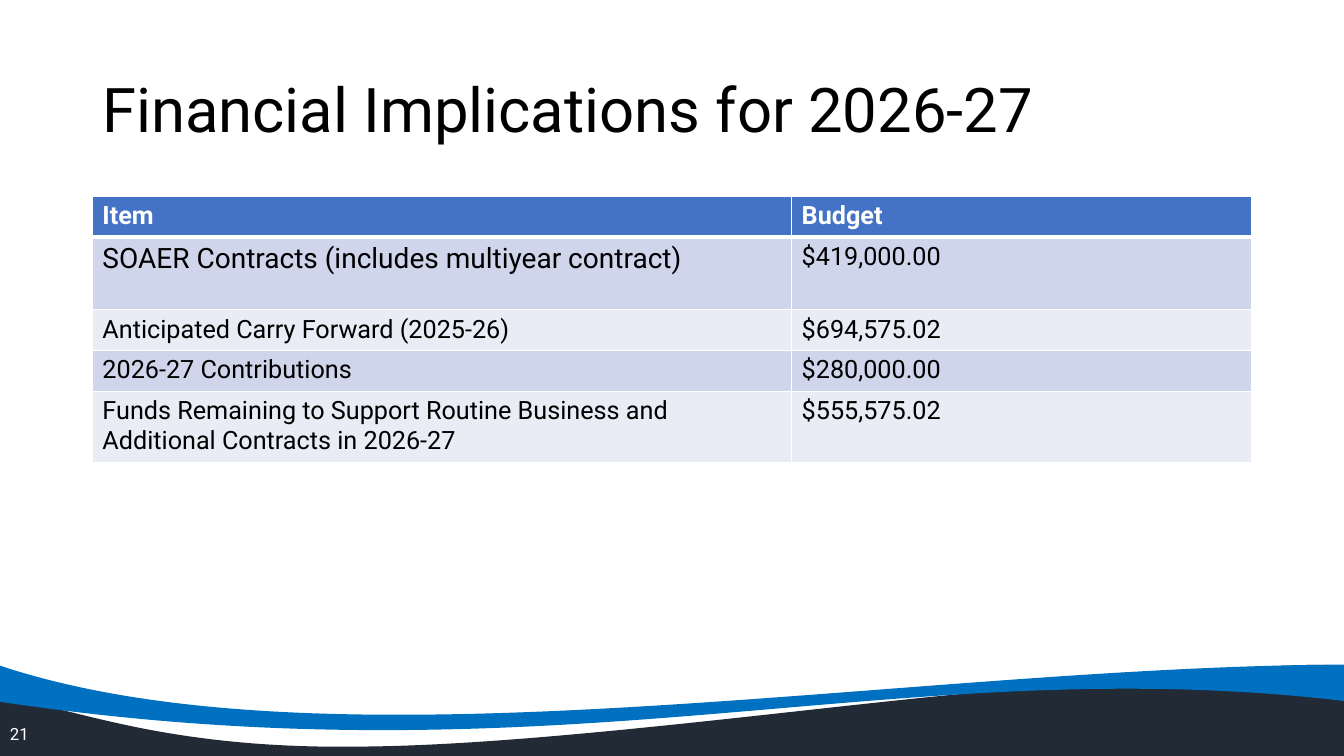
from lxml.etree import SubElement
from pptx import Presentation
from pptx.dml.color import RGBColor
from pptx.enum.text import MSO_ANCHOR as Anchor
from pptx.oxml.ns import qn
from pptx.util import Pt

PX = 9525  # EMU per px, 96 px to the inch
FONT = "Roboto"
COLORS = {
    "black": "000000",
    "white": "FFFFFF",
    "navy": "222A35",
    "blue": "0070C0",
    "header": "4472C4",
    "band_dark": "CFD5EA",
    "band_light": "E9EBF5",
}
BUDGET_ROWS = [
    ("Item", "Budget"),
    ("SOAER Contracts (includes multiyear contract)", "$419,000.00"),
    ("Anticipated Carry Forward (2025-26)", "$694,575.02"),
    ("2026-27 Contributions", "$280,000.00"),
    ("Funds Remaining to Support Routine Business and "
     "Additional Contracts in 2026-27", "$555,575.02"),
]
COLUMN_WIDTHS = [666, 438]
ROW_HEIGHTS = [39, 69, 39, 39, 66]
LARGE_CELL = (1, 0)

# Each wave is a box and its segments: one point is a line, three a curve.
NAVY_WAVE = (-3, 634, 1286, 86), [
    [(-3, 667)],
    [(54, 664), (136, 715), (350, 711)],
    [(524, 709), (792, 671), (948, 658)],
    [(1103, 644), (1296, 622), (1283, 640)],
    [(1282, 667), (1282, 693), (1282, 720)],
    [(-2, 720)],
]
BLUE_WAVE = (-3, 633, 1286, 62), [
    [(-3, 633)],
    [(313, 740), (861, 634), (1283, 633)],
    [(1283, 668)],
    [(855, 617), (542, 750), (-3, 668)],
]


def rgb(name):
    return RGBColor.from_string(COLORS[name])


def add_wave(slide, wave, color):
    """Build the wave's box as a freeform, then give its outline real curves."""
    (left, top, width, height), segments = wave
    right, bottom = left + width, top + height
    builder = slide.shapes.build_freeform(left, top, scale=PX)
    builder.add_line_segments([(right, top), (right, bottom), (left, bottom)])
    shape = builder.convert_to_shape()
    outline = next(shape._element.iter(qn("a:path")))
    del outline[:]
    for index, segment in enumerate(segments):
        line_tag = "a:lnTo" if index else "a:moveTo"
        tag = "a:cubicBezTo" if len(segment) == 3 else line_tag
        command = SubElement(outline, qn(tag))
        for x, y in segment:
            SubElement(command, qn("a:pt"), x=str(x - left), y=str(y - top))
    SubElement(outline, qn("a:close"))
    shape.shadow.inherit = False
    shape.fill.solid()
    shape.fill.fore_color.rgb = rgb(color)
    shape.line.fill.background()


def add_run(paragraph, text, size, color, bold=False):
    run = paragraph.add_run()
    run.text = text
    font = run.font
    font.name, font.size, font.bold = FONT, Pt(size), bold
    font.color.rgb = rgb(color)


def add_text(slide, box, text, size, color, line_spacing=1.0):
    frame = slide.shapes.add_textbox(*(value * PX for value in box)).text_frame
    frame.word_wrap = True
    frame.vertical_anchor = Anchor.MIDDLE
    paragraph = frame.paragraphs[0]
    paragraph.line_spacing = line_spacing
    add_run(paragraph, text, size, color)


def add_borders(cell, top, bottom):
    properties = cell._tc.get_or_add_tcPr()
    for side, width in (("L", 1), ("R", 1), ("T", top), ("B", bottom)):
        line = SubElement(properties, qn(f"a:ln{side}"), w=str(Pt(width)))
        fill = SubElement(line, qn("a:solidFill"))
        SubElement(fill, qn("a:srgbClr"), val=COLORS["white"])


def add_budget_table(slide, left, top):
    table = slide.shapes.add_table(
        len(BUDGET_ROWS), len(COLUMN_WIDTHS), left * PX, top * PX,
        sum(COLUMN_WIDTHS) * PX, sum(ROW_HEIGHTS) * PX,
    ).table
    for column, width in zip(table.columns, COLUMN_WIDTHS):
        column.width = width * PX
    for row, height in zip(table.rows, ROW_HEIGHTS):
        row.height = height * PX
    for row_index, texts in enumerate(BUDGET_ROWS):
        header = row_index == 0
        band = "band_dark" if row_index % 2 else "band_light"
        for column_index, text in enumerate(texts):
            cell = table.cell(row_index, column_index)
            add_borders(cell, 3 if row_index == 1 else 1, 3 if header else 1)
            cell.fill.solid()
            cell.fill.fore_color.rgb = rgb("header" if header else band)
            size = 20 if (row_index, column_index) == LARGE_CELL else 18
            add_run(cell.text_frame.paragraphs[0], text, size,
                    "white" if header else "black", header)


def main():
    presentation = Presentation()
    presentation.slide_width = 1280 * PX
    presentation.slide_height = 720 * PX
    slide = presentation.slides.add_slide(presentation.slide_layouts[6])
    add_wave(slide, NAVY_WAVE, "navy")
    add_wave(slide, BLUE_WAVE, "blue")
    add_text(slide, (88, 38, 1104, 139), "Financial Implications for 2026-27",
             44, "black", line_spacing=0.9)
    add_budget_table(slide, 88, 187)
    add_text(slide, (0, 680, 288, 38), "21", 12, "white")
    presentation.save("out.pptx")


if __name__ == "__main__":
    main()
